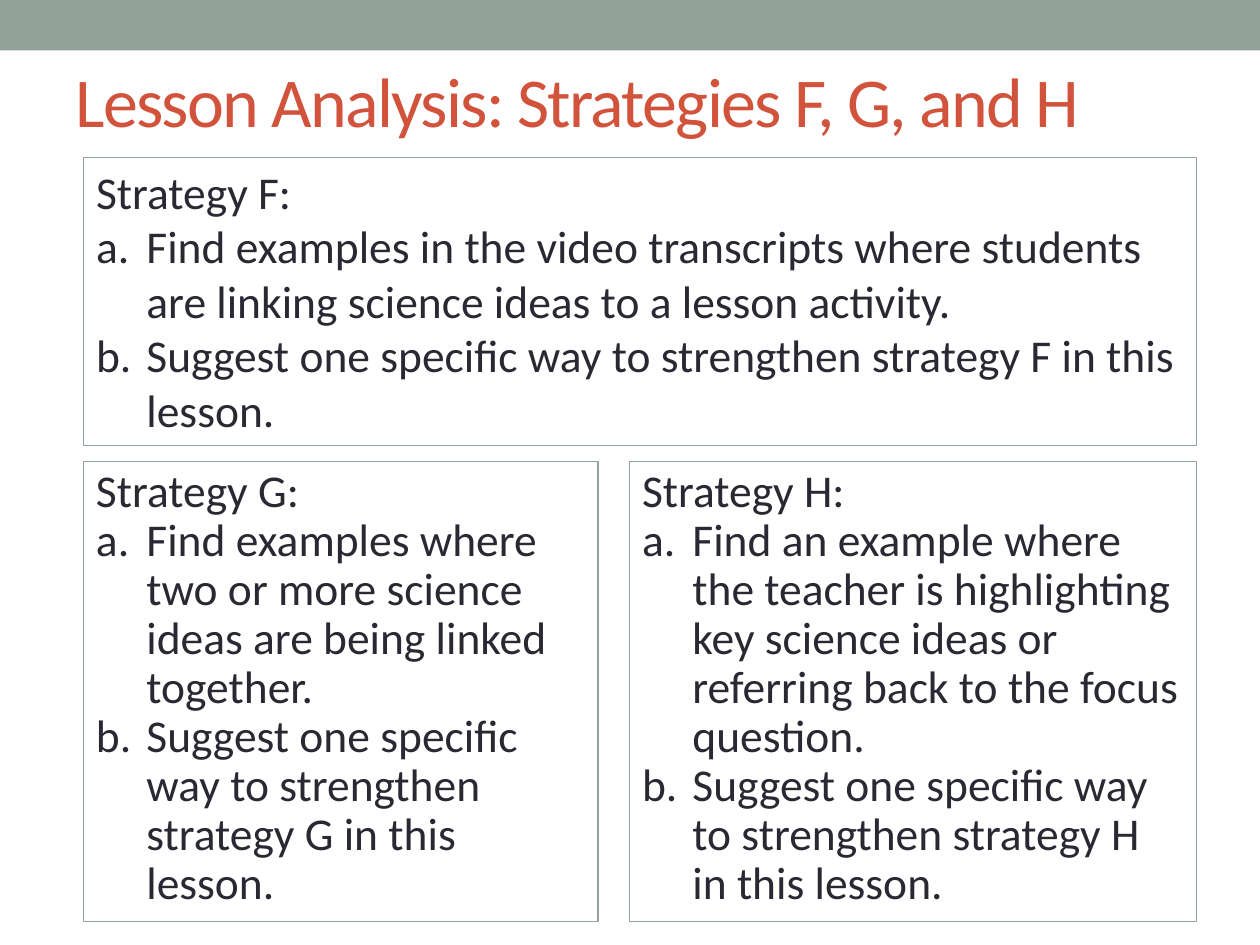
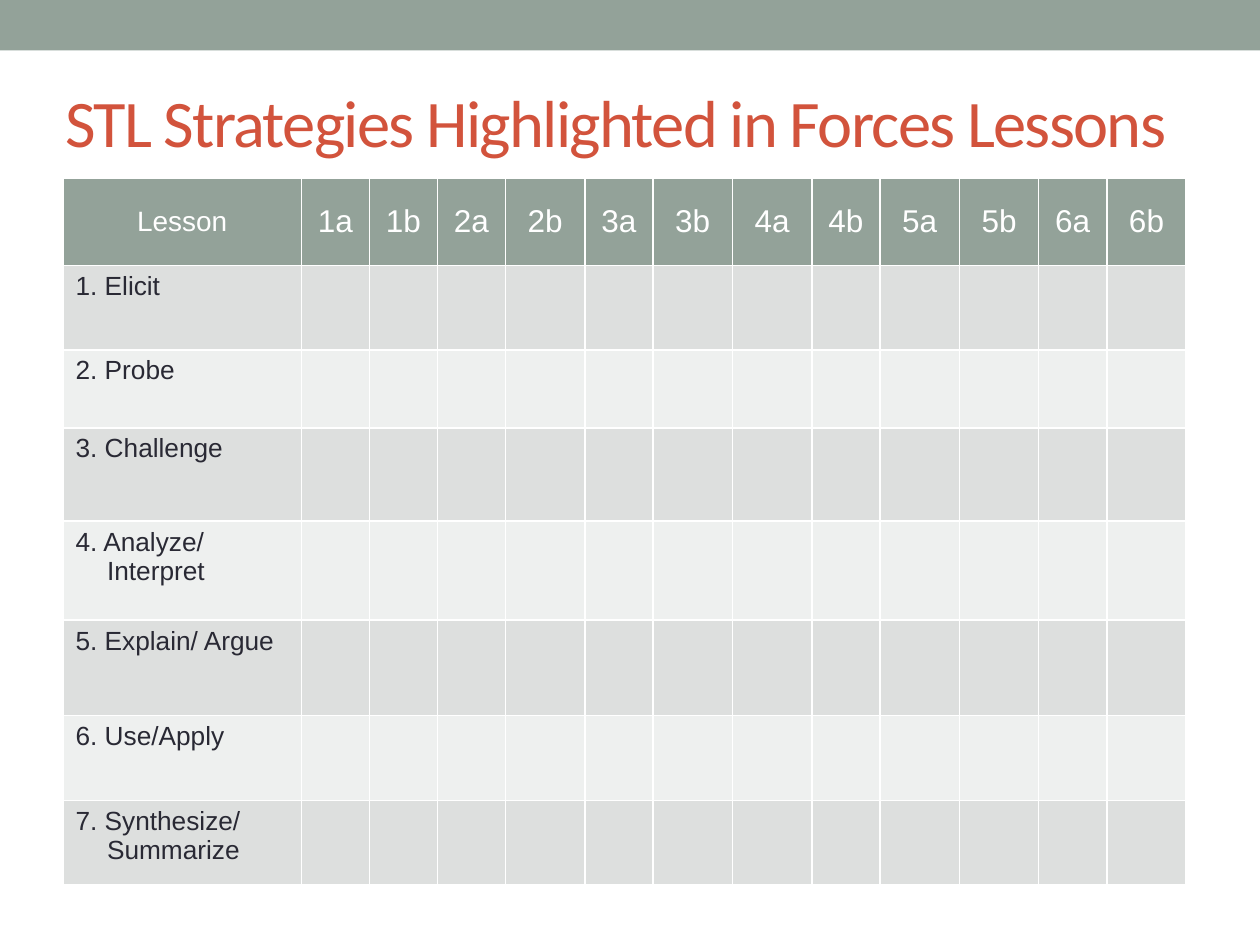
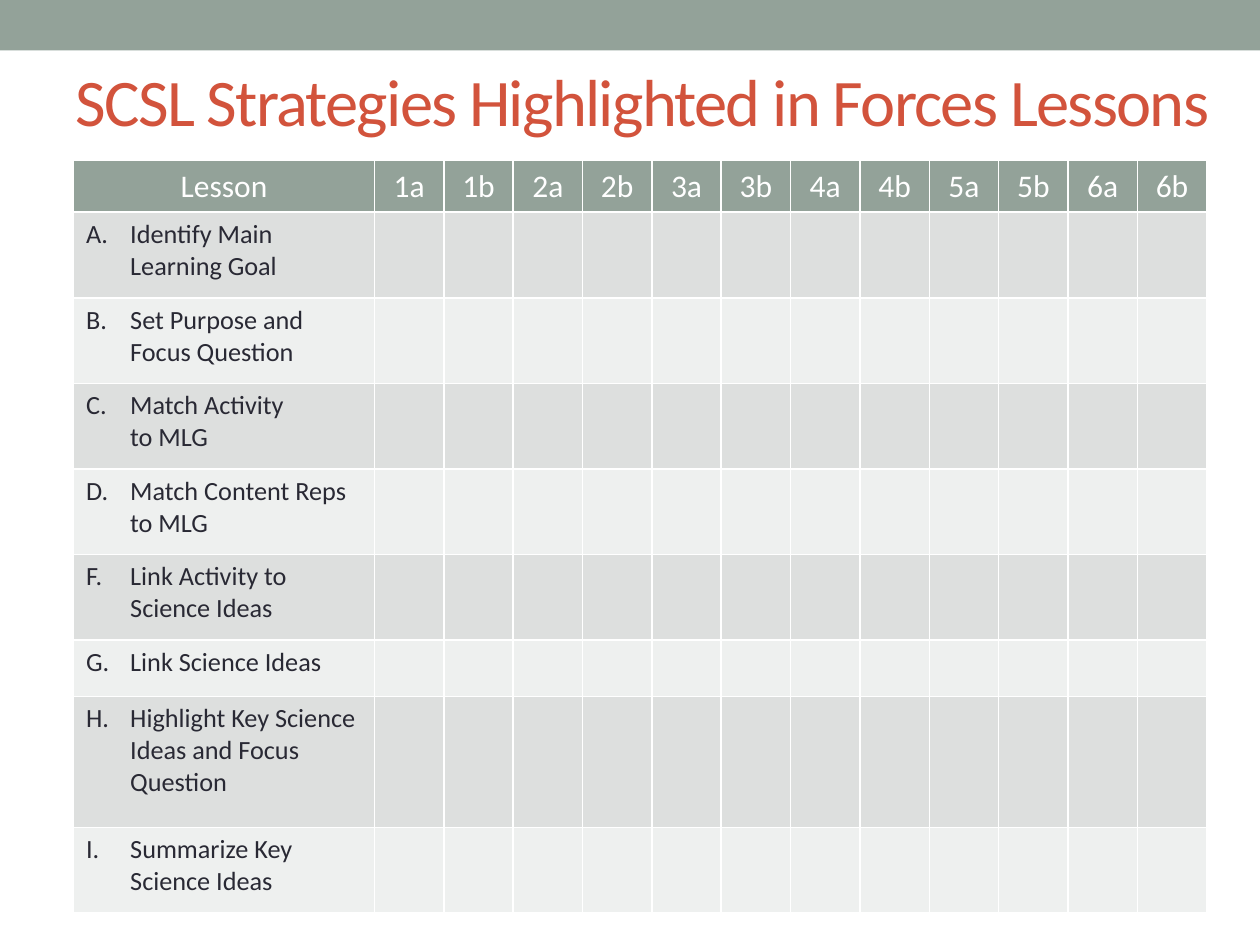
from dataclasses import dataclass

import lxml.etree
import pptx
import pptx.dml.color
import pptx.enum.shapes
import pptx.enum.text
import pptx.oxml.ns
import pptx.presentation
import pptx.shapes.autoshape
import pptx.slide
import pptx.table
import pptx.text.text
import pptx.util

Pt = pptx.util.Pt
RGBColor = pptx.dml.color.RGBColor
ALIGN = pptx.enum.text.PP_ALIGN
ANCHOR = pptx.enum.text.MSO_ANCHOR
RECT = pptx.enum.shapes.MSO_SHAPE.RECTANGLE
qn = pptx.oxml.ns.qn

SAGE = RGBColor(0x93, 0xA2, 0x99)
RED = RGBColor(0xD2, 0x53, 0x3C)
INK = RGBColor(0x29, 0x29, 0x34)
WHITE = RGBColor(0xFF, 0xFF, 0xFF)
ROW_FILLS = (RGBColor(0xDD, 0xDF, 0xDE), RGBColor(0xEE, 0xF0, 0xEF))

TITLE_ONLY = 5
LESSONS = [f"{number}{part}" for number in range(1, 7) for part in "ab"]


@dataclass
class Title:
    text: str
    left: float
    top: float
    width: float
    size: float
    height: float = 78


@dataclass
class StrategyBox:
    letter: str
    task: str
    left: float
    top: float
    width: float
    height: float
    line_spacing: float | None = 0.9


@dataclass
class LessonTable:
    left: float
    top: float
    label_width: float
    lesson_widths: list[float]
    row_heights: list[float]
    labels: list[str]
    font: str
    indent: float
    header_size: float = 18
    lesson_size: float = 18
    before: float = 0
    after: float = 0


def add_text(
    p: pptx.text.text._Paragraph,
    text: str,
    *,
    size: float,
    color: RGBColor = INK,
    font: str = "Calibri",
    align: ALIGN = ALIGN.LEFT,
    spacing: float = 0,
    line_spacing: float | None = None,
    before: float = 0,
    after: float = 0,
    hanging: float = 0,
    lettered: bool = False,
) -> None:
    p.alignment = align
    p.line_spacing = line_spacing
    p.space_before = Pt(before)
    p.space_after = Pt(after)
    pPr = p._p.get_or_add_pPr()
    if hanging:
        pPr.set("marL", str(Pt(hanging)))
        pPr.set("indent", str(-Pt(hanging)))
    if lettered:
        lxml.etree.SubElement(pPr, qn("a:buAutoNum"), type="alphaLcPeriod")
    for i, line in enumerate(text.split("\n")):
        if i:
            p.add_line_break()
        r = p.add_run()
        r.text = line
        r.font.name = font
        r.font.size = Pt(size)
        r.font.bold = False
        r.font.color.rgb = color
        if spacing:
            r._r.get_or_add_rPr().set("spc", str(int(spacing * 100)))


def add_rect(
    slide: pptx.slide.Slide, left: float, top: float, width: float, height: float
) -> pptx.shapes.autoshape.Shape:
    sp = slide.shapes.add_shape(RECT, Pt(left), Pt(top), Pt(width), Pt(height))
    sp.shadow.inherit = False
    return sp


def add_band(slide: pptx.slide.Slide) -> None:
    band = add_rect(slide, 0, 0, 720, 28.8)
    band.fill.solid()
    band.fill.fore_color.rgb = SAGE
    band.line.fill.background()
    slide.shapes.element.insert(2, band.element)


def add_slide(prs: pptx.presentation.Presentation, title: Title) -> pptx.slide.Slide:
    slide = prs.slides.add_slide(prs.slide_layouts[TITLE_ONLY])
    add_band(slide)
    sp = slide.shapes.title
    sp.left, sp.top = Pt(title.left), Pt(title.top)
    sp.width, sp.height = Pt(title.width), Pt(title.height)
    tf = sp.text_frame
    tf.vertical_anchor = ANCHOR.MIDDLE
    add_text(tf.paragraphs[0], title.text, size=title.size, color=RED, spacing=-1)
    return slide


def add_strategy(slide: pptx.slide.Slide, box: StrategyBox) -> None:
    sp = add_rect(slide, box.left, box.top, box.width, box.height)
    sp.fill.background()
    sp.line.color.rgb = SAGE
    sp.line.width = Pt(0.75)
    tf = sp.text_frame
    tf.word_wrap = True
    tf.auto_size = pptx.enum.text.MSO_AUTO_SIZE.SHAPE_TO_FIT_TEXT
    tf.vertical_anchor = ANCHOR.TOP
    add_text(tf.paragraphs[0], f"Strategy {box.letter}:", size=26, line_spacing=box.line_spacing)
    suggestion = f"Suggest one specific way to strengthen strategy {box.letter} in this lesson."
    for task in (box.task, suggestion):
        add_text(tf.add_paragraph(), task, size=26, line_spacing=box.line_spacing,
                 hanging=28.8, lettered=True)


def style_cell(cell: pptx.table._Cell, fill: RGBColor) -> None:
    tcPr = cell._tc.get_or_add_tcPr()
    for side in "LRTB":
        ln = lxml.etree.SubElement(tcPr, qn(f"a:ln{side}"), w=str(Pt(1)))
        line_fill = lxml.etree.SubElement(ln, qn("a:solidFill"))
        lxml.etree.SubElement(line_fill, qn("a:srgbClr"), val=str(WHITE))
    cell.fill.solid()
    cell.fill.fore_color.rgb = fill


def add_lesson_table(slide: pptx.slide.Slide, lesson_table: LessonTable) -> None:
    t = lesson_table
    widths = [t.label_width, *t.lesson_widths]
    frame = slide.shapes.add_table(len(t.row_heights), len(widths), Pt(t.left), Pt(t.top),
                                   Pt(sum(widths)), Pt(sum(t.row_heights)))
    table = frame.table
    for column, width in zip(table.columns, widths):
        column.width = Pt(width)
    for i, (row, height) in enumerate(zip(table.rows, t.row_heights)):
        row.height = Pt(height)
        for cell in row.cells:
            style_cell(cell, ROW_FILLS[(i - 1) % 2] if i else SAGE)
    for j, heading in enumerate(["Lesson", *LESSONS]):
        cell = table.cell(0, j)
        cell.vertical_anchor = ANCHOR.MIDDLE
        add_text(cell.text_frame.paragraphs[0], heading, font=t.font, color=WHITE,
                 size=t.lesson_size if j else t.header_size, align=ALIGN.CENTER, before=t.before)
    for i, label in enumerate(t.labels, start=1):
        add_text(table.cell(i, 0).text_frame.paragraphs[0], label, font=t.font, size=15,
                 hanging=t.indent, after=t.after)


ANALYSIS_TITLE = Title("Lesson Analysis: Strategies F, G, and H", 36, 18, 642, 40)
STL_TITLE = Title("STL Strategies Highlighted in Forces Lessons", 30, 30, 672, 38)
SCSL_TITLE = Title("SCSL Strategies Highlighted in Forces Lessons", 36, 18, 684, 38)

STRATEGIES = [
    StrategyBox("G", "Find examples where two or more science ideas are being linked together.",
                47.8, 263.8, 294, 263),
    StrategyBox("H", "Find an example where the teacher is highlighting key science ideas or "
                "referring back to the focus question.", 359.8, 263.8, 324, 263),
    StrategyBox("F", "Find examples in the video transcripts where students are linking science "
                "ideas to a lesson activity.", 47.8, 90, 636, 164.7, None),
]

WIDE_LESSONS = {"2b", "3b", "4a", "5a", "5b", "6b"}
STL_TABLE = LessonTable(
    left=36, top=102, label_width=136.2,
    lesson_widths=[45.4 if lesson in WIDE_LESSONS else 38.9 for lesson in LESSONS],
    row_heights=[49.7, 48.3, 44.6, 53.3, 56.6, 54.4, 48.5, 48.5],
    labels=["1. Elicit", "2. Probe", "3. Challenge", "4. Analyze/ Interpret",
            "5. Explain/ Argue", "6. Use/Apply", "7. Synthesize/\nSummarize"],
    font="Arial", indent=18, header_size=16, before=12, after=12,
)
SCSL_TABLE = LessonTable(
    left=42, top=91.6, label_width=172,
    lesson_widths=[39.63] * len(LESSONS),
    row_heights=[29.7, *[48.9] * 5, 32.2, 74.9, 48.9],
    labels=["A.\tIdentify Main Learning Goal", "B.\tSet Purpose and Focus Question",
            "C.\tMatch Activity\nto MLG", "D.\tMatch Content Reps to MLG",
            "F.\tLink Activity to Science Ideas", "G.\tLink Science Ideas",
            "H.\tHighlight Key Science Ideas and Focus Question",
            "I.\tSummarize Key Science Ideas"],
    font="Calibri", indent=25.2,
)


def main() -> None:
    prs = pptx.Presentation()
    prs.slide_width, prs.slide_height = Pt(720), Pt(540)

    slide = add_slide(prs, ANALYSIS_TITLE)
    for box in STRATEGIES:
        add_strategy(slide, box)

    add_lesson_table(add_slide(prs, STL_TITLE), STL_TABLE)
    add_lesson_table(add_slide(prs, SCSL_TITLE), SCSL_TABLE)
    prs.save("out.pptx")


if __name__ == "__main__":
    main()
